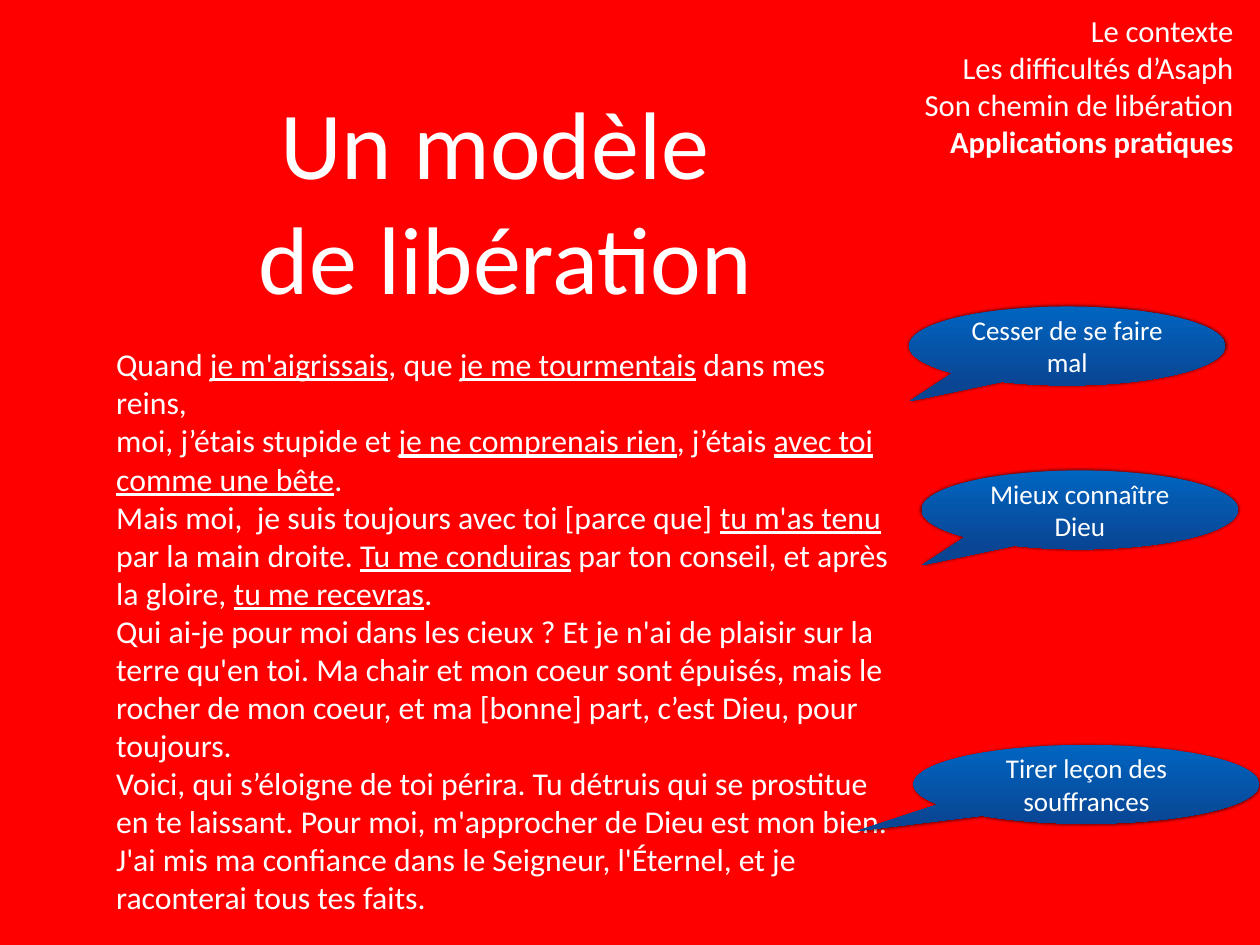
from dataclasses import dataclass

from lxml.etree import SubElement
from pptx import Presentation
from pptx.dml.color import RGBColor
from pptx.enum.shapes import MSO_SHAPE as Preset
from pptx.enum.text import MSO_ANCHOR as Anchor, MSO_AUTO_SIZE as AutoSize, PP_ALIGN as Align
from pptx.oxml.ns import qn
from pptx.util import Cm, Pt

COLOURS = {
    "background": "FF0000",
    "text": "FFFFFF",
    "callout top": "0065C1",
    "callout bottom": "094593",
    "shadow": "000000",
}
FONT = "Calibri"
UNDERLINE, BOLD = "_", "*"

TITLE = ["Un modèle ", "de libération"]
PSALM = [
    "Quand _je m'aigrissais_, que _je me tourmentais_ dans mes reins,",
    "moi, j’étais stupide et _je ne comprenais rien_, j’étais _avec toi comme une bête_.",
    "Mais moi,  je suis toujours avec toi [parce que] _tu m'as tenu_ par la main droite. "
    "_Tu me conduiras_ par ton conseil, et après la gloire, _tu me recevras_.",
    "Qui ai-je pour moi dans les cieux ? Et je n'ai de plaisir sur la terre qu'en toi. "
    "Ma chair et mon coeur sont épuisés, mais le rocher de mon coeur, et ma [bonne] part, "
    "c’est Dieu, pour toujours.",
    "Voici, qui s’éloigne de toi périra. Tu détruis qui se prostitue en te laissant. "
    "Pour moi, m'approcher de Dieu est mon bien. J'ai mis ma confiance dans le Seigneur, "
    "l'Éternel, et je raconterai tous tes faits.",
]
OUTLINE = ["Le contexte", "Les difficultés d’Asaph", "Son chemin de libération",
           "*Applications pratiques*"]


@dataclass
class Area:
    left: float
    top: float
    width: float
    height: float

    def lengths(self) -> list:
        return [Cm(value) for value in (self.left, self.top, self.width, self.height)]


@dataclass
class Callout:
    text: str
    area: Area
    tip: tuple = (-0.497, 0.7)


CALLOUTS = [
    Callout("Cesser de se faire mal", Area(26.06, 8.79, 9.07, 2.26)),
    Callout("Mieux connaître Dieu", Area(26.42, 13.49, 9.07, 2.26)),
    Callout("Tirer leçon des souffrances", Area(26.19, 21.36, 9.91, 2.26), (-0.661, 0.592)),
]


def colour(name: str) -> RGBColor:
    return RGBColor.from_string(COLOURS[name])


def set_all(target, values: dict) -> None:
    for name, value in values.items():
        setattr(target, name, value)


def place(box, area: Area) -> None:
    set_all(box, dict(zip(("left", "top", "width", "height"), area.lengths())))


def write(box, lines: list, size: float, align: Align) -> None:
    """Fill the box; _..._ underlines and *...* makes bold."""
    frame = box.text_frame
    margins = dict.fromkeys(
        ("margin_left", "margin_top", "margin_right", "margin_bottom"), Cm(0.08))
    set_all(frame, {"word_wrap": True, "auto_size": AutoSize.NONE,
                    "vertical_anchor": Anchor.MIDDLE, **margins})
    for index, line in enumerate(lines):
        para = frame.paragraphs[0] if index == 0 else frame.add_paragraph()
        set_all(para, {"alignment": align, "space_before": Pt(0)})
        properties = para._p.get_or_add_pPr()
        properties.set("marL", "0")
        properties.set("indent", "0")
        SubElement(properties, qn("a:buNone"))
        mark = BOLD if BOLD in line else UNDERLINE
        for position, words in enumerate(line.split(mark)):
            if not words:
                continue
            span = para.add_run()
            span.text = words
            marked = position % 2 == 1
            set_all(span.font, {"name": FONT, "size": Pt(size),
                                "bold": marked and mark == BOLD,
                                "underline": marked and mark == UNDERLINE})
            span.font.color.rgb = colour("text")


def add_soft_shadow(shape) -> None:
    shape.shadow.inherit = False
    effects = shape._element.spPr.find(qn("a:effectLst"))
    shadow = SubElement(effects, qn("a:outerShdw"), blurRad=str(Pt(3)), dist="0",
                        dir="18900000", rotWithShape="0")
    tint = SubElement(shadow, qn("a:srgbClr"), val=COLOURS["shadow"])
    SubElement(tint, qn("a:alpha"), val="80000")


def add_callout(page, callout: Callout) -> None:
    bubble = page.shapes.add_shape(Preset.OVAL_CALLOUT, *callout.area.lengths())
    for index, offset in enumerate(callout.tip):
        bubble.adjustments[index] = offset
    bubble.fill.gradient()
    bubble.fill.gradient_angle = 270
    for stop, name in zip(bubble.fill.gradient_stops, ("callout top", "callout bottom")):
        stop.color.rgb = colour(name)
    bubble.line.fill.background()
    add_soft_shadow(bubble)
    write(bubble, [callout.text], 22, Align.CENTER)


def main() -> None:
    deck = Presentation()
    set_all(deck, {"slide_width": Cm(36.12), "slide_height": Cm(27.1)})
    page = deck.slides.add_slide(deck.slide_layouts[1])
    page.background.fill.solid()
    page.background.fill.fore_color.rgb = colour("background")

    title, body = page.placeholders
    place(title, Area(4.9, 1.85, 19.18, 7.67))
    write(title, TITLE, 78, Align.CENTER)
    place(body, Area(3.25, 10.11, 22.48, 15.95))
    write(body, PSALM, 25.8, Align.LEFT)

    outline = page.shapes.add_textbox(*Area(25.2, 0.25, 10.24, 4.42).lengths())
    write(outline, OUTLINE, 24.9, Align.RIGHT)

    for callout in CALLOUTS:
        add_callout(page, callout)
    deck.save("out.pptx")


if __name__ == "__main__":
    main()
